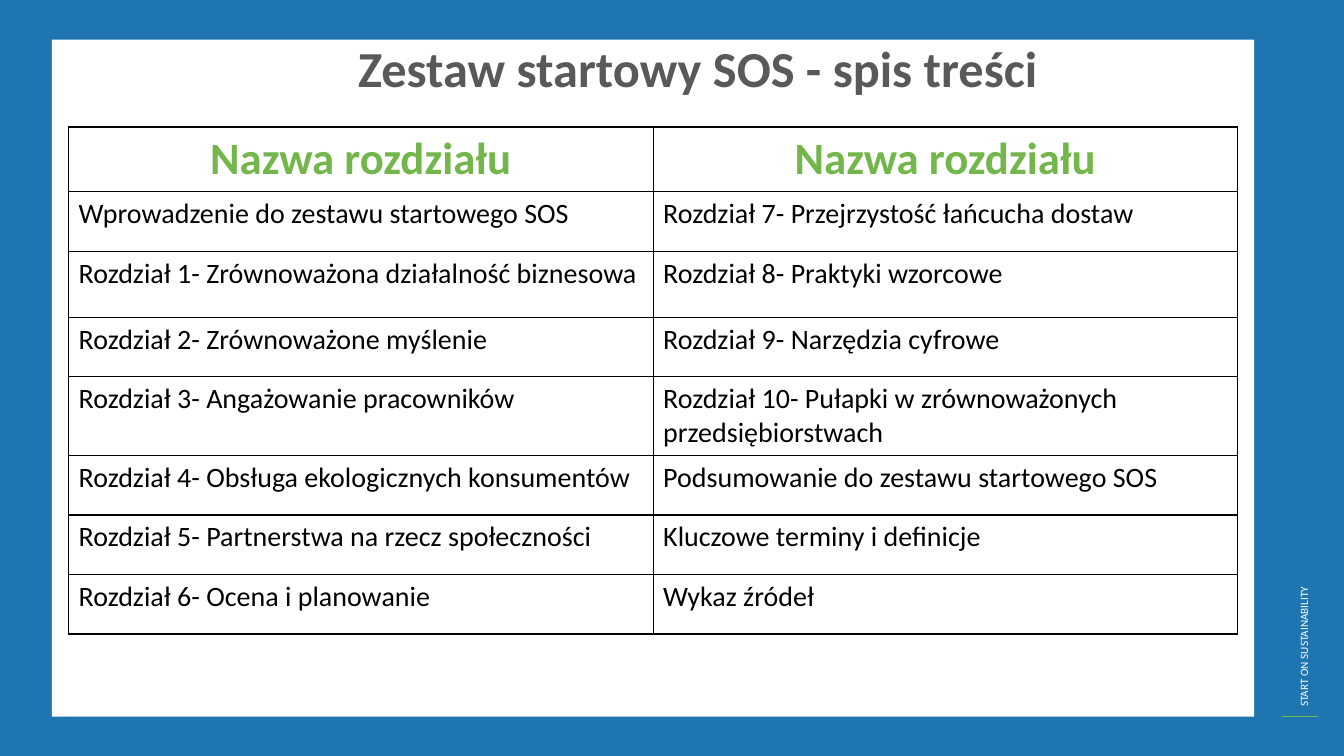
from dataclasses import dataclass

from lxml import etree
from pptx import Presentation
from pptx.dml.color import RGBColor
from pptx.enum.shapes import MSO_CONNECTOR, MSO_SHAPE
from pptx.enum.text import MSO_ANCHOR, MSO_AUTO_SIZE, PP_ALIGN
from pptx.oxml import parse_xml
from pptx.oxml.ns import nsdecls, qn
from pptx.util import Cm, Pt

RECTANGLE = MSO_SHAPE.RECTANGLE
STRAIGHT = MSO_CONNECTOR.STRAIGHT
CENTER, LEFT = PP_ALIGN.CENTER, PP_ALIGN.LEFT
TOP = MSO_ANCHOR.TOP
NO_AUTOFIT = MSO_AUTO_SIZE.NONE


@dataclass(frozen=True)
class Theme:
    font: str = "Calibri"
    blue: RGBColor = RGBColor(0x1E, 0x75, 0xB0)
    green: RGBColor = RGBColor(0x73, 0xB6, 0x4B)
    white: RGBColor = RGBColor(0xFF, 0xFF, 0xFF)
    grey: RGBColor = RGBColor(0x59, 0x59, 0x59)
    black: RGBColor = RGBColor(0x01, 0x01, 0x01)
    title_size: Pt = Pt(36)
    header_size: Pt = Pt(32)
    body_size: Pt = Pt(20)
    label_size: Pt = Pt(8)


THEME = Theme()


def style(paragraph, size, color, bold=False, align=LEFT):
    paragraph.alignment = align
    paragraph.font.name = THEME.font
    paragraph.font.size = size
    paragraph.font.bold = bold
    paragraph.font.color.rgb = color


def add_borders(cell):
    properties = cell._tc.get_or_add_tcPr()
    for position, side in enumerate(("lnL", "lnR", "lnT", "lnB")):
        properties.insert(position, parse_xml(
            f'<a:{side} {nsdecls("a")} w="{Pt(1)}"><a:solidFill>'
            f'<a:srgbClr val="{THEME.black}"/></a:solidFill></a:{side}>'))


prs = Presentation()
prs.slide_width, prs.slide_height = Cm(33.87), Cm(19.05)
slide = prs.slides.add_slide(prs.slide_layouts[5])
shapes = slide.shapes

# Blue frame around a white panel
for left, top, width, height, color in (
    (0, 0, 33.87, 19.05, THEME.blue),
    (1.31, 1, 30.3, 17.06, THEME.white),
):
    panel = shapes.add_shape(RECTANGLE, Cm(left), Cm(top), Cm(width), Cm(height))
    panel.shadow.inherit = False
    panel.fill.solid()
    panel.fill.fore_color.rgb = color
    panel.line.fill.background()

# Vertical label with a green rule on the right edge
project_label = shapes.add_textbox(Cm(27.2), Cm(12.09), Cm(11.33), Cm(0.61))
project_label.rotation = 270
project_label.text_frame.word_wrap = True
project_label.text_frame.text = "START ON SUSTAINABILITY"
style(project_label.text_frame.paragraphs[0], THEME.label_size, THEME.white)

green_rule = shapes.add_connector(STRAIGHT, Cm(32.31), Cm(18.06), Cm(33.22), Cm(18.06))
green_rule.line.color.rgb = THEME.green
green_rule.line.width = Pt(1)
etree.SubElement(green_rule._element.spPr, qn("a:effectLst"))

# Title, raised above the panel
title = shapes.title
title.left, title.top, title.width, title.height = Cm(3.38), Cm(0.97), Cm(27.79), Cm(2.24)
title.text_frame.text = "Zestaw startowy SOS - spis treści"
title.text_frame.vertical_anchor = TOP
title.text_frame.word_wrap = True
title.text_frame.auto_size = NO_AUTOFIT
heading = title.text_frame.paragraphs[0]
style(heading, THEME.title_size, THEME.grey, bold=True, align=CENTER)
heading.line_spacing = 0.9
heading.space_before = Pt(10)
heading_properties = heading._p.get_or_add_pPr()
heading_properties.set("marL", str(Cm(1.27)))
heading_properties.set("indent", str(Cm(-0.64)))
shapes._spTree.append(title._element)

# Table of contents
chapters = [
    ("Nazwa rozdziału", "Nazwa rozdziału"),
    ("Wprowadzenie do zestawu startowego SOS", "Rozdział 7- Przejrzystość łańcucha dostaw"),
    ("Rozdział 1- Zrównoważona działalność biznesowa", "Rozdział 8- Praktyki wzorcowe"),
    ("Rozdział 2- Zrównoważone myślenie", "Rozdział 9- Narzędzia cyfrowe"),
    ("Rozdział 3- Angażowanie pracowników",
     "Rozdział 10- Pułapki w zrównoważonych przedsiębiorstwach"),
    ("Rozdział 4- Obsługa ekologicznych konsumentów", "Podsumowanie do zestawu startowego SOS"),
    ("Rozdział 5- Partnerstwa na rzecz społeczności", "Kluczowe terminy i definicje"),
    ("Rozdział 6- Ocena i planowanie", "Wykaz źródeł"),
]
row_heights = [1.5, 1.5, 1.66, 1.5, 1.6, 1.5, 1.5, 1.5]
contents = shapes.add_table(len(chapters), 2, Cm(1.73), Cm(3.2), Cm(29.46),
                            Cm(sum(row_heights))).table
contents.horz_banding = False

for row, (names, height) in enumerate(zip(chapters, row_heights)):
    contents.rows[row].height = Cm(height)
    for column, name in enumerate(names):
        cell = contents.cell(row, column)
        cell.text = name
        cell.fill.background()
        add_borders(cell)
        entry = cell.text_frame.paragraphs[0]
        if row == 0:
            style(entry, THEME.header_size, THEME.green, bold=True, align=CENTER)
        else:
            style(entry, THEME.body_size, THEME.black)

prs.save("out.pptx")
